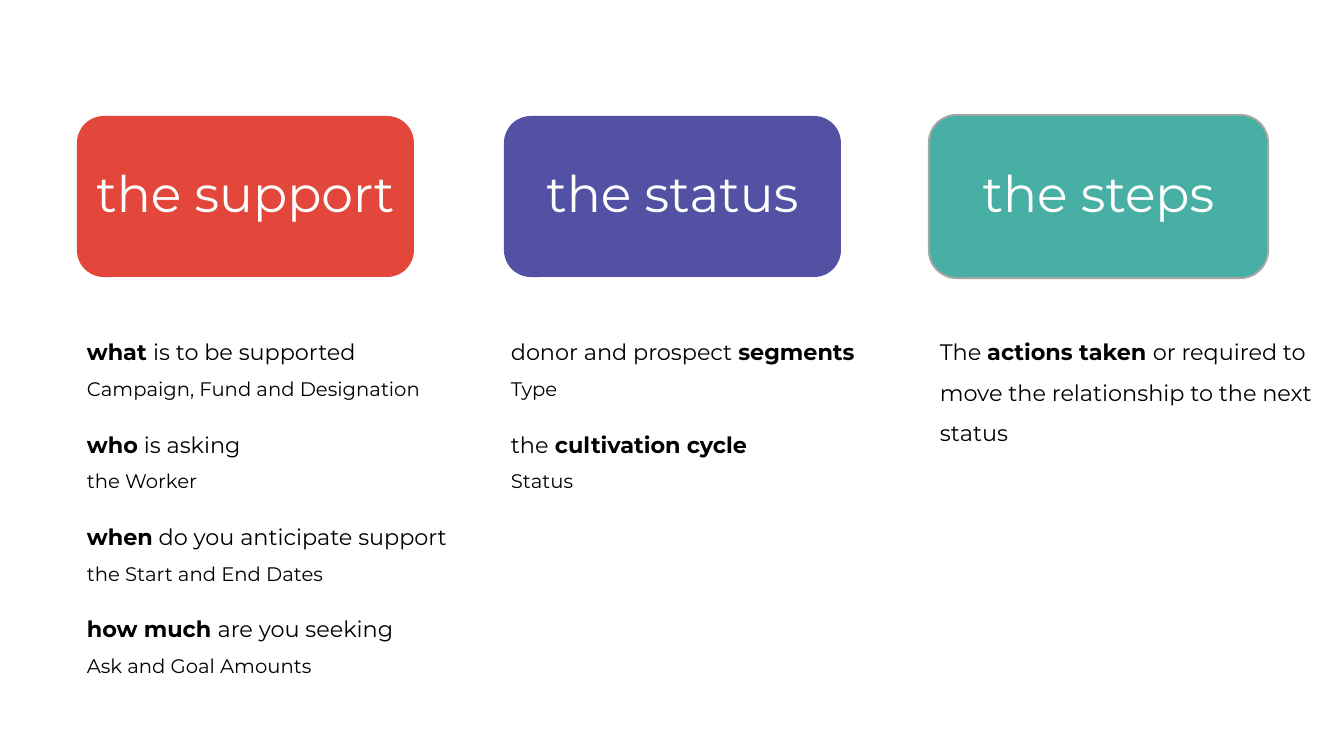
from pptx import Presentation
from pptx.dml.color import RGBColor
from pptx.enum.shapes import MSO_SHAPE
from pptx.enum.text import MSO_ANCHOR, PP_ALIGN
from pptx.util import Emu, Pt

ROUNDED = MSO_SHAPE.ROUNDED_RECTANGLE
MIDDLE = MSO_ANCHOR.MIDDLE
CENTER = PP_ALIGN.CENTER

FONT = "Montserrat"
CARD_TOP, CARD_W, CARD_H = 116, 337, 161
BODY_TOP, BODY_W = 320, 425

# Each column: card left, body left, body height, title, fill, outline, body items.
# Each item: lead line as (text, bold) runs, then its detail line or None.
COLUMNS = [
    (77, 77, 367, "the support", "E3463B", None, [
        ([("what ", True), ("is to be supported", False)],
         "Campaign, Fund and Designation"),
        ([("who", True), (" is asking", False)], "the Worker"),
        ([("when", True), (" do you anticipate support", False)],
         "the Start and End Dates"),
        ([("how much ", True), ("are you seeking", False)],
         "Ask and Goal Amounts"),
    ]),
    (504, 501, 175, "the status", "5351A3", None, [
        ([("donor and prospect ", False), ("segments", True)], "Type"),
        ([("the", False), (" cultivation cycle", True)], "Status"),
    ]),
    (930, 930, 128, "the steps", "48AFA5", "A6A6A6", [
        ([("The ", False), ("actions taken ", True),
          ("or required to move the relationship to the next status", False)],
         None),
    ]),
]


def px(n):
    return Emu(round(n * 914400 / 100.8))


def color(value):
    return RGBColor.from_string(value)


def set_font(p, size, value):
    p.font.name = FONT
    p.font.size = Pt(size)
    p.font.color.rgb = color(value)


def add_panel(slide, left, fill, outline=None):
    sp = slide.shapes.add_shape(ROUNDED, px(left), px(CARD_TOP), px(CARD_W), px(CARD_H))
    sp.shadow.inherit = False
    sp.fill.solid()
    sp.fill.fore_color.rgb = color(fill)
    if outline:
        sp.line.color.rgb = color(outline)
        sp.line.width = Pt(3)
    else:
        sp.line.fill.background()
    return sp


def add_card(slide, left, title, fill, outline):
    """Add a titled card; an outline lies behind it, so only its outer half shows."""
    if outline:
        add_panel(slide, left, fill, outline)
    tf = add_panel(slide, left, fill).text_frame
    tf.margin_left = tf.margin_right = tf.margin_top = tf.margin_bottom = px(3)
    tf.vertical_anchor = MIDDLE
    p = tf.paragraphs[0]
    p.text = title
    p.alignment = CENTER
    p.line_spacing = 0.9
    set_font(p, 36, "FFFFFF")


def add_line(p, runs, size):
    p.line_spacing = 1.5
    set_font(p, size, "000000")
    for text, bold in runs:
        r = p.add_run()
        r.text = text
        r.font.bold = bold


def add_body(slide, left, height, items):
    tf = slide.shapes.add_textbox(px(left), px(BODY_TOP), px(BODY_W), px(height)).text_frame
    tf.word_wrap = True
    for i, (lead, detail) in enumerate(items):
        p = tf.add_paragraph() if i else tf.paragraphs[0]
        if i:
            p.space_before = Pt(12)
        add_line(p, lead, 16)
        if detail:
            add_line(tf.add_paragraph(), [(detail, False)], 14)


def main():
    prs = Presentation()
    prs.slide_width, prs.slide_height = px(1344), px(756)
    slide = prs.slides.add_slide(prs.slide_layouts[6])
    for card_left, body_left, body_h, title, fill, outline, items in COLUMNS:
        add_card(slide, card_left, title, fill, outline)
        add_body(slide, body_left, body_h, items)
    prs.save("out.pptx")


if __name__ == "__main__":
    main()
